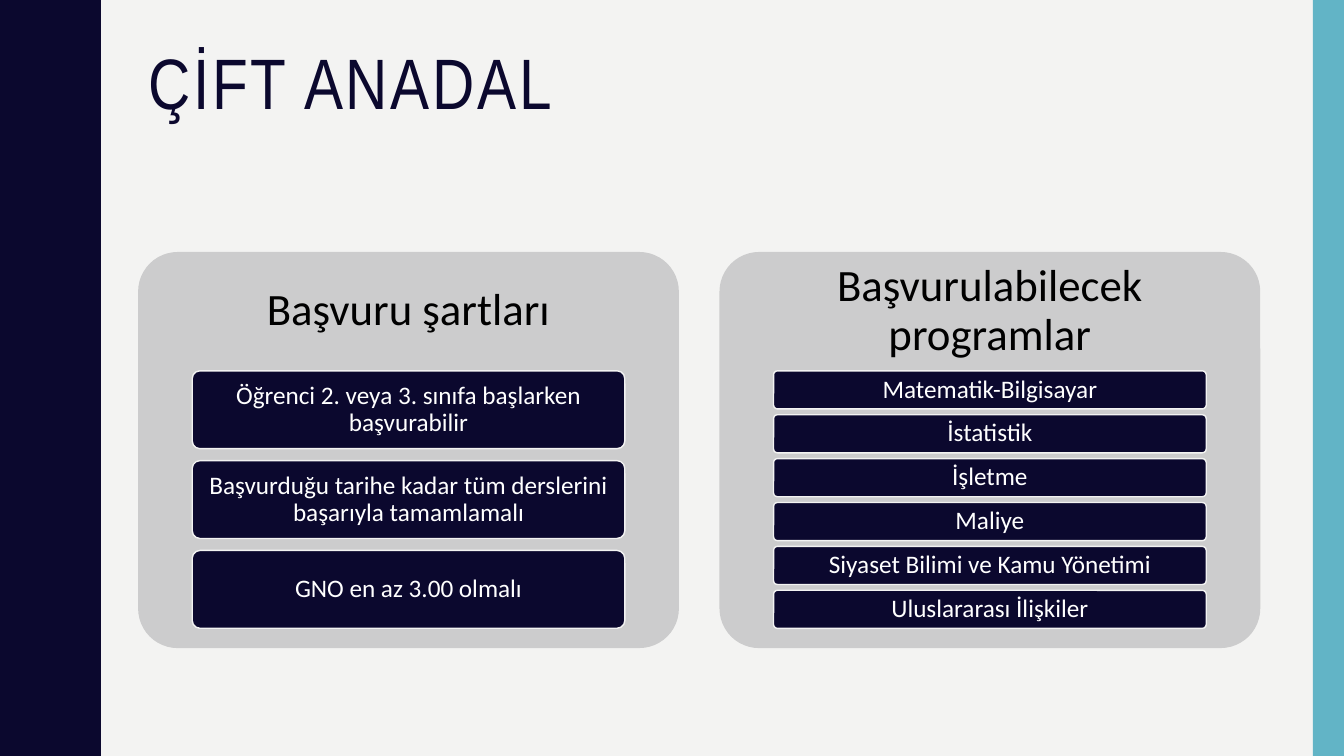
from pptx import Presentation
from pptx.dml.color import RGBColor
from pptx.enum.shapes import MSO_SHAPE
from pptx.enum.text import MSO_ANCHOR, MSO_AUTO_SIZE, PP_ALIGN
from pptx.util import Inches, Pt

COLORS = {
    "navy": "0B082E",
    "teal": "62B4C6",
    "paper": "F3F3F2",
    "panel": "CCCCCD",
    "black": "000000",
    "white": "FFFFFF",
}
WIDTH, HEIGHT = 13.33, 7.5
LEFT, CONTENT_WIDTH = 1.37, 11.13
PANEL_TOP, PANEL_HEIGHT = 2.5, 3.93
PANEL_WIDTH = CONTENT_WIDTH / 2.075
PANEL_STEP = PANEL_WIDTH * 1.075
HEADING_HEIGHT = PANEL_HEIGHT * 0.3
BAR_WIDTH = PANEL_WIDTH * 0.8
BARS_HEIGHT = PANEL_HEIGHT * 0.65
GAP_SHARE = 2 / 13
STRIP_WIDTH = 0.31
WAVE_COUNT = 5
WAVE_STEP = HEIGHT / WAVE_COUNT

PANELS = [
    ("Başvuru şartları", [
        "Öğrenci 2. veya 3. sınıfa başlarken başvurabilir",
        "Başvurduğu tarihe kadar tüm derslerini başarıyla tamamlamalı",
        "GNO en az 3.00 olmalı",
    ]),
    ("Başvurulabilecek programlar", [
        "Matematik-Bilgisayar",
        "İstatistik",
        "İşletme",
        "Maliye",
        "Siyaset Bilimi ve Kamu Yönetimi",
        "Uluslararası İlişkiler",
    ]),
]


def paint(shape, fill, line=None):
    shape.shadow.inherit = False
    shape.fill.solid()
    shape.fill.fore_color.rgb = RGBColor.from_string(COLORS[fill])
    if line:
        shape.line.color.rgb = RGBColor.from_string(COLORS[line])
        shape.line.width = Pt(1)
    else:
        shape.line.fill.background()


def write(shape, text, font_name, size, color, align, anchor, inset_x, inset_y):
    frame = shape.text_frame
    frame.word_wrap = True
    frame.auto_size = MSO_AUTO_SIZE.NONE
    frame.vertical_anchor = anchor
    frame.margin_left = frame.margin_right = Inches(inset_x)
    frame.margin_top = frame.margin_bottom = Inches(inset_y)
    paragraph = frame.paragraphs[0]
    paragraph.alignment = align
    paragraph.line_spacing = 0.9
    run = paragraph.add_run()
    run.text = text
    run.font.name = font_name
    run.font.size = Pt(size)
    run.font.color.rgb = RGBColor.from_string(COLORS[color])
    return run


presentation = Presentation()
presentation.slide_width = Inches(WIDTH)
presentation.slide_height = Inches(HEIGHT)
slide = presentation.slides.add_slide(presentation.slide_layouts[5])
slide.background.fill.solid()
slide.background.fill.fore_color.rgb = RGBColor.from_string(COLORS["paper"])

rise = [
    (0.78, 0), (0.78, 0.07), (0.79, 0.14), (0.8, 0.2), (0.81, 0.25),
    (0.83, 0.29), (0.85, 0.33), (0.87, 0.38), (0.89, 0.42), (0.91, 0.46),
    (0.93, 0.5), (0.95, 0.55), (0.96, 0.61), (0.97, 0.68), (0.97, 0.75),
]
wave = rise + [(x, WAVE_STEP - y) for x, y in reversed(rise[:-1])]
edge = [(x, y + index * WAVE_STEP) for index in range(WAVE_COUNT) for x, y in wave]
builder = slide.shapes.build_freeform(0, 0, scale=Inches(1))
builder.add_line_segments(edge + [(0, HEIGHT)], close=True)
paint(builder.convert_to_shape(), "navy")

strip = slide.shapes.add_shape(
    MSO_SHAPE.RECTANGLE, Inches(WIDTH - STRIP_WIDTH), 0, Inches(STRIP_WIDTH), Inches(HEIGHT))
paint(strip, "teal")

title = slide.shapes.title
title.left, title.top = Inches(LEFT), Inches(0.42)
title.width, title.height = Inches(CONTENT_WIDTH), Inches(1.63)
title_run = write(title, "ÇİFT ANADAL", "Arial Narrow", 51, "navy",
                  PP_ALIGN.LEFT, MSO_ANCHOR.TOP, 0.1, 0.05)
title_run.font._element.set("spc", "200")

for column, (heading, items) in enumerate(PANELS):
    panel_left = LEFT + column * PANEL_STEP
    panel = slide.shapes.add_shape(
        MSO_SHAPE.ROUNDED_RECTANGLE, Inches(panel_left), Inches(PANEL_TOP),
        Inches(PANEL_WIDTH), Inches(PANEL_HEIGHT))
    panel.adjustments[0] = 0.1
    paint(panel, "panel")

    heading_box = slide.shapes.add_textbox(
        Inches(panel_left), Inches(PANEL_TOP), Inches(PANEL_WIDTH), Inches(HEADING_HEIGHT))
    write(heading_box, heading, "Calibri", 32, "black",
          PP_ALIGN.CENTER, MSO_ANCHOR.MIDDLE, 0.13, 0.13)

    bar_height = BARS_HEIGHT / (len(items) + (len(items) - 1) * GAP_SHARE)
    bar_left = panel_left + (PANEL_WIDTH - BAR_WIDTH) / 2
    for row, item in enumerate(items):
        bar_top = PANEL_TOP + HEADING_HEIGHT + row * bar_height * (1 + GAP_SHARE)
        bar = slide.shapes.add_shape(
            MSO_SHAPE.ROUNDED_RECTANGLE, Inches(bar_left), Inches(bar_top),
            Inches(BAR_WIDTH), Inches(bar_height))
        bar.adjustments[0] = 0.1
        paint(bar, "navy", "paper")
        write(bar, item, "Calibri", 18, "white",
              PP_ALIGN.CENTER, MSO_ANCHOR.MIDDLE, 0.05, 0.04)

presentation.save("out.pptx")
